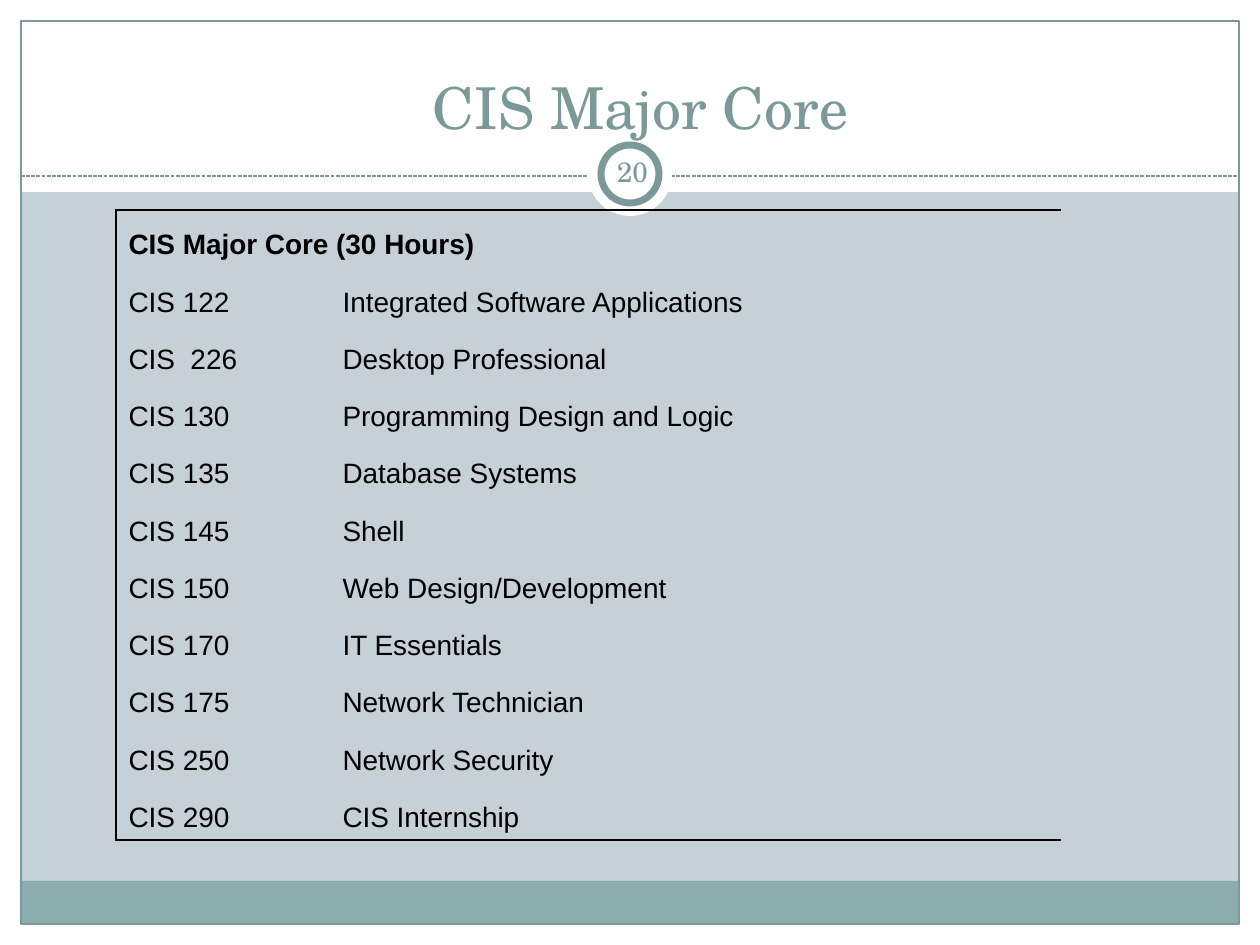
from lxml.etree import SubElement
from pptx import Presentation
from pptx.dml.color import RGBColor
from pptx.enum.dml import MSO_LINE as Dash
from pptx.enum.shapes import MSO_CONNECTOR as Connector, MSO_SHAPE as Shape
from pptx.enum.text import MSO_ANCHOR as Anchor, PP_ALIGN as Align
from pptx.oxml.ns import qn
from pptx.util import Emu, Pt

PX = 914400 // 126  # one px in EMU
COLORS = {"back": "C5D1D7", "white": "FFFFFF", "band": "8CADAE",
          "accent": "7C999A", "ink": "000000"}
SERIF, SANS = "TeX Gyre Schola", "Arial"
HEADING = "CIS Major Core (30 Hours)"
COURSES = [
    ("CIS 122", "Integrated Software Applications"),
    ("CIS  226", "Desktop Professional"),
    ("CIS 130", "Programming Design and Logic"),
    ("CIS 135", "Database Systems"),
    ("CIS 145", "Shell"),
    ("CIS 150", "Web Design/Development"),
    ("CIS 170", "IT Essentials"),
    ("CIS 175", "Network Technician"),
    ("CIS 250", "Network Security"),
    ("CIS 290", "CIS Internship"),
]


def px(*lengths):
    return [Emu(length * PX) for length in lengths]


def rgb(name):
    return RGBColor.from_string(COLORS[name])


def add_panel(slide, kind, box, fill=None, line=None, weight=0.75):
    panel = slide.shapes.add_shape(kind, *px(*box))
    panel.shadow.inherit = False
    if fill:
        panel.fill.solid()
        panel.fill.fore_color.rgb = rgb(fill)
    else:
        panel.fill.background()
    if line:
        panel.line.color.rgb = rgb(line)
        panel.line.width = Pt(weight)
    else:
        panel.line.fill.background()


def style_text(paragraph, size, font, color, bold=False):
    for run in paragraph.runs:
        run.font.size, run.font.name, run.font.bold = Pt(size), font, bold
        run.font.color.rgb = rgb(color)


def add_label(slide, box, words, size, anchor, inset):
    frame = slide.shapes.add_textbox(*px(*box)).text_frame
    frame.word_wrap = True
    frame.vertical_anchor = anchor
    frame.margin_left = frame.margin_right = Emu(inset * PX)
    frame.margin_top = frame.margin_bottom = Emu(6 * PX)
    frame.text = words
    frame.paragraphs[0].alignment = Align.CENTER
    style_text(frame.paragraphs[0], size, SERIF, "accent")


def add_backdrop(slide, box):
    left, top, width, height = box
    margin, header, footer = 21, 192, 43
    right, bottom = left + width - margin, top + height - margin
    inner = width - 2 * margin

    # White margins and header
    for strip in [(left, bottom, width, margin), (left, top, width, header),
                  (left, top, margin, height), (right, top, margin, height)]:
        add_panel(slide, Shape.RECTANGLE, strip, "white")

    # Footer band and frame
    add_panel(slide, Shape.RECTANGLE,
              (left + margin, bottom - footer, inner, footer), "band")
    add_panel(slide, Shape.RECTANGLE,
              (left + margin, top + margin, inner, height - 2 * margin), line="accent")

    # Dashed divider
    divider = slide.shapes.add_connector(
        Connector.STRAIGHT, *px(left + margin, top + 176, right, top + 176))
    divider.line.color.rgb = rgb("accent")
    divider.line.width = Pt(0.75)
    divider.line.dash_style = Dash.SQUARE_DOT
    SubElement(divider.element.spPr, qn("a:effectLst"))


def add_page_badge(slide, box, number):
    left, top, size, _ = box
    ring = 13
    add_panel(slide, Shape.OVAL, box, "white")
    add_panel(slide, Shape.OVAL,
              (left + ring, top + ring, size - 2 * ring, size - 2 * ring),
              "white", "accent", 4)
    add_label(slide, (left + ring, top + 9, 63, 60), number, 16, Anchor.MIDDLE, 6)


def set_borders(cell, shown):
    properties = cell._tc.get_or_add_tcPr()
    for side in "LRTB":
        edge = SubElement(properties, qn(f"a:ln{side}"), w=str(Pt(1)))
        if side in shown:
            fill = SubElement(edge, qn("a:solidFill"))
            SubElement(fill, qn("a:srgbClr"), val=COLORS["ink"])
        else:
            SubElement(edge, qn("a:noFill"))


def add_course_table(slide, box):
    width, height = box[2:]
    rows = [(HEADING, "")] + COURSES
    count = len(rows)
    table = slide.shapes.add_table(count, 2, *px(*box)).table
    table.first_row = table.horz_banding = False
    code_width = 214
    table.columns[0].width, table.columns[1].width = px(code_width, width - code_width)
    table.cell(0, 0).merge(table.cell(0, 1))

    for r, course in enumerate(rows):
        start, end = (round(height * edge / count) for edge in (r, r + 1))
        table.rows[r].height = Emu((end - start) * PX)
        for c, words in enumerate(course):
            cell = table.cell(r, c)
            # Lines run round the left, top and bottom of the table
            set_borders(cell, [side for side, shown in
                               zip("LTB", (c == 0, r == 0, r == count - 1)) if shown])
            cell.fill.background()
            cell.vertical_anchor = Anchor.BOTTOM
            if words:
                cell.text = words
                paragraph = cell.text_frame.paragraphs[0]
                hanging = paragraph._p.get_or_add_pPr()
                hanging.set("marL", str(48 * PX))
                hanging.set("indent", str(-48 * PX))
                style_text(paragraph, 16, SANS, "ink", bold=r == 0)


def main():
    deck = Presentation()
    deck.slide_width, deck.slide_height = px(1260, 945)
    slide = deck.slides.add_slide(deck.slide_layouts[6])
    slide.background.fill.solid()
    slide.background.fill.fore_color.rgb = rgb("back")

    add_backdrop(slide, (0, 0, 1260, 945))
    add_page_badge(slide, (588, 132, 84, 84), "20")
    add_label(slide, (63, 34, 1155, 113), "CIS Major Core", 33, Anchor.BOTTOM, 13)
    add_course_table(slide, (116, 210, 945, 630))
    deck.save("out.pptx")


if __name__ == "__main__":
    main()
